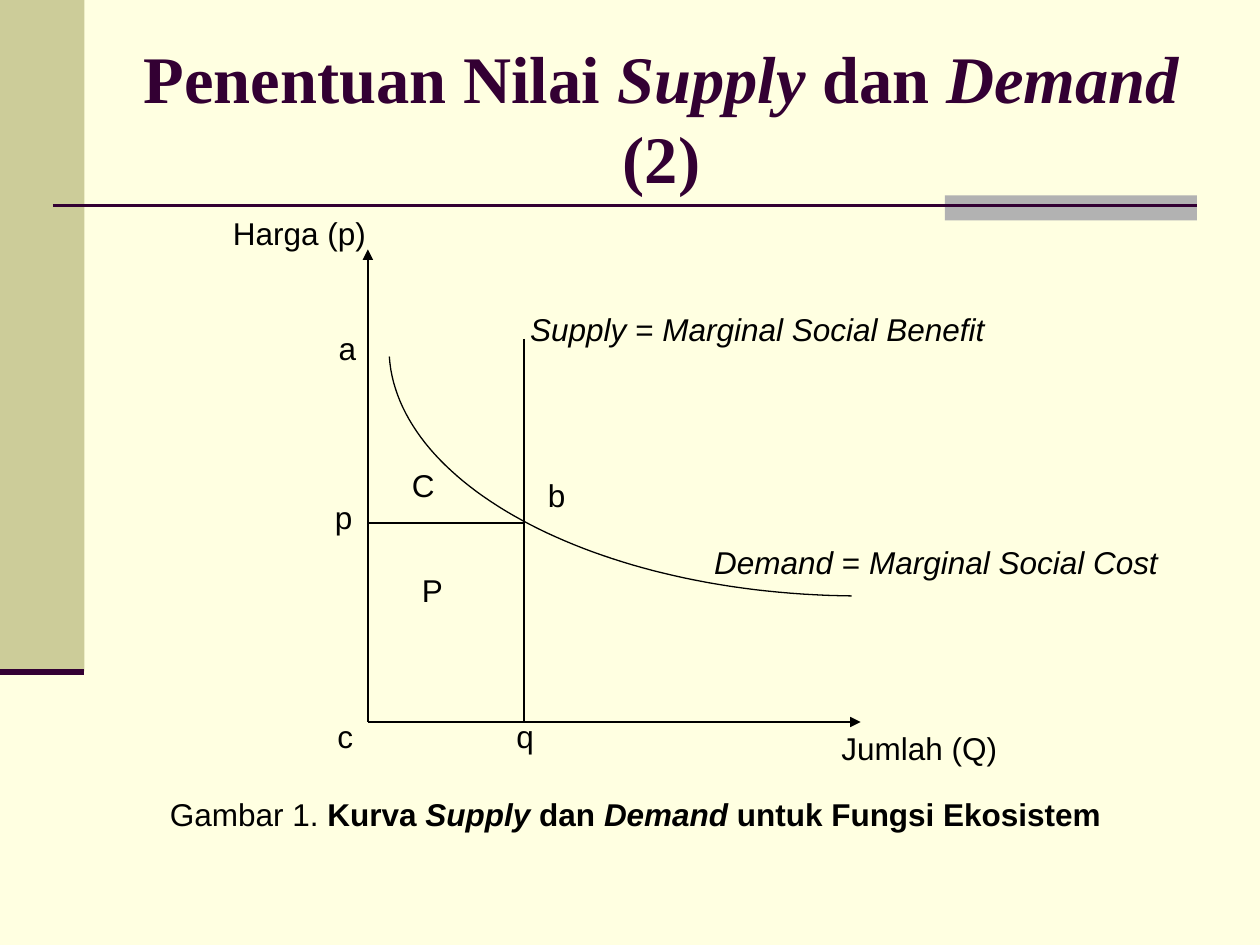
from lxml.etree import SubElement
from pptx import Presentation
from pptx.dml.color import RGBColor
from pptx.enum.shapes import MSO_CONNECTOR, MSO_SHAPE
from pptx.enum.text import MSO_ANCHOR, MSO_AUTO_SIZE, PP_ALIGN
from pptx.oxml.ns import qn
from pptx.util import Inches, Pt

PLUM = "330033"
BLACK = "000000"
X0, Y0 = 2.92, 5.73
XQ, YP = 4.16, 4.15


def rgb(value):
    """Turn a hex string into a colour."""
    return RGBColor.from_string(value)


def write(tf, *runs, size=18, font="Arial", color=BLACK, bold=False, align=PP_ALIGN.LEFT):
    """Fill a frame with runs, each a string or a (text, style letters) pair."""
    tf.word_wrap = True
    tf.auto_size = MSO_AUTO_SIZE.NONE
    p = tf.paragraphs[0]
    p.alignment = align
    for run in runs:
        text, style = (run, "") if isinstance(run, str) else run
        r = p.add_run()
        r.text = text
        r.font.name = font
        r.font.size = Pt(size)
        r.font.color.rgb = rgb(color)
        r.font.bold = bold or "b" in style
        r.font.italic = "i" in style


def add_label(s, x, y, w, *runs):
    """Add a one-line text box."""
    tb = s.shapes.add_textbox(Inches(x), Inches(y), Inches(w), Inches(0.4))
    write(tb.text_frame, *runs)


def add_block(s, x, y, w, h, color):
    """Add a plain filled rectangle."""
    sp = s.shapes.add_shape(MSO_SHAPE.RECTANGLE, Inches(x), Inches(y), Inches(w), Inches(h))
    sp.shadow.inherit = False
    sp.fill.solid()
    sp.fill.fore_color.rgb = rgb(color)
    sp.line.fill.background()


def add_line(s, x1, y1, x2, y2, color=BLACK, width=0.75, arrow=False):
    """Add a straight line, with an optional arrowhead at its end."""
    c = s.shapes.add_connector(
        MSO_CONNECTOR.STRAIGHT, Inches(x1), Inches(y1), Inches(x2), Inches(y2))
    c.line.color.rgb = rgb(color)
    c.line.width = Pt(width)
    spPr = c._element.spPr
    if arrow:
        SubElement(spPr.find(qn("a:ln")), qn("a:tailEnd"), type="triangle")
    SubElement(spPr, qn("a:effectLst"))


def add_curve(s, a, b, c, d, steps=60):
    """Add an open cubic curve with end points a, d and control points b, c."""
    points = []
    for i in range(steps + 1):
        t = i / steps
        u = 1 - t
        weights = (u ** 3, 3 * u * u * t, 3 * u * t * t, t ** 3)
        points.append([Inches(sum(w * q[k] for w, q in zip(weights, (a, b, c, d))))
                       for k in (0, 1)])
    fb = s.shapes.build_freeform(*points[0])
    fb.add_line_segments(points[1:], close=False)
    sp = fb.convert_to_shape()
    sp.shadow.inherit = False
    sp.fill.background()
    sp.line.color.rgb = rgb(BLACK)
    sp.line.width = Pt(0.75)


def add_title(s):
    """Place and format the title."""
    sp = s.shapes.title
    sp.left, sp.top, sp.width, sp.height = (Inches(v) for v in (1, 0.3, 8.5, 1.25))
    sp.text_frame.vertical_anchor = MSO_ANCHOR.MIDDLE
    write(sp.text_frame, "Penentuan Nilai ", ("Supply", "i"), " dan ", ("Demand ", "i"), "(2)",
          size=38, font="Times New Roman", color=PLUM, bold=True, align=PP_ALIGN.CENTER)


def add_frame(s):
    """Draw the background and the decoration around the content."""
    s.background.fill.solid()
    s.background.fill.fore_color.rgb = rgb("FFFFE1")
    add_block(s, 0, 0, 0.67, 5.33, "CCCC99")
    add_block(s, 7.5, 1.55, 2, 0.2, "B2B2B2")
    add_line(s, 0.42, 1.63, 9.5, 1.63, PLUM, 1.5)
    add_line(s, 0, 5.33, 0.67, 5.33, PLUM, 3.5)


def add_diagram(s):
    """Draw the axes, the supply and demand lines and their labels."""
    add_line(s, X0, Y0, X0, 1.98, arrow=True)
    add_line(s, X0, Y0, 6.83, Y0, arrow=True)
    add_curve(s, (6.76, 4.73), (4.77, 4.71), (3.16, 3.87), (3.09, 2.83))
    add_line(s, XQ, 2.69, XQ, Y0)
    add_line(s, X0, YP, XQ, YP)
    add_label(s, 6.58, 5.74, 2.17, "Jumlah (Q)")
    add_label(s, 1.75, 1.65, 2, "Harga (p)")
    add_label(s, 5.57, 4.26, 4, ("Demand", "i"), " = ", ("Marginal Social Cost", "i"))
    add_label(s, 4.11, 2.41, 4.17, ("Supply", "i"), " = ", ("Marginal Social Benefit", "i"))
    for text, x, y in (("q", 4, 5.64), ("c", 2.58, 5.64), ("a", 2.59, 2.56), ("p", 2.56, 3.9),
                       ("b", 4.25, 3.73), ("P", 3.25, 4.48), ("C", 3.17, 3.65)):
        add_label(s, x, y, 0.5, text)


def main():
    """Build the slide and save it."""
    prs = Presentation()
    prs.slide_width, prs.slide_height = Inches(10), Inches(7.5)
    s = prs.slides.add_slide(prs.slide_layouts[5])
    add_frame(s)
    add_title(s)
    add_diagram(s)
    add_label(s, 1.25, 6.26, 8.08, "Gambar 1. ", ("Kurva ", "b"), ("Supply", "bi"),
              (" dan ", "b"), ("Demand", "bi"), (" untuk Fungsi Ekosistem", "b"))
    prs.save("out.pptx")


if __name__ == "__main__":
    main()
